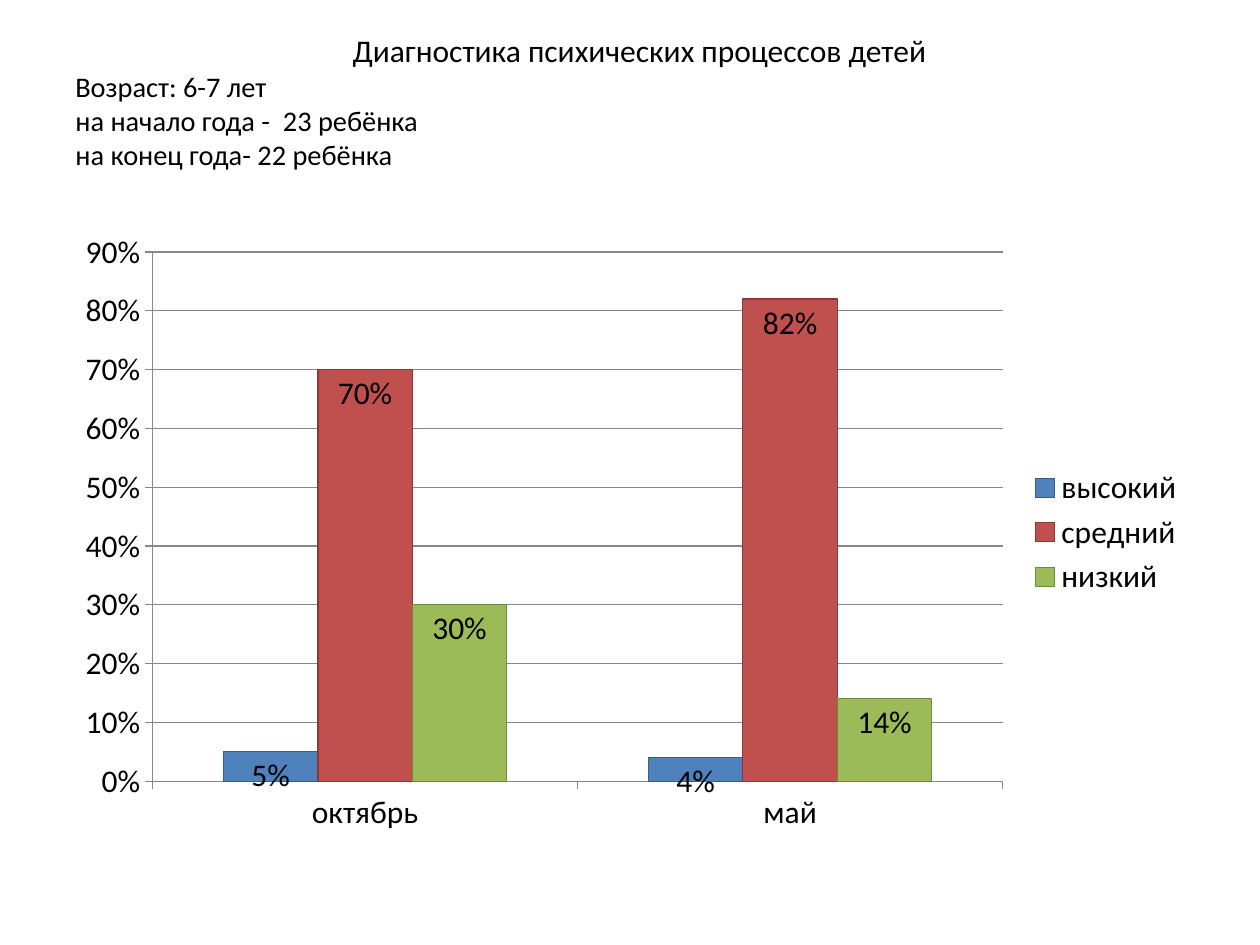
import pptx
import pptx.util
import pptx.chart.data
import pptx.dml.color
import pptx.enum.chart
import pptx.enum.text

Inches, Pt = pptx.util.Inches, pptx.util.Pt
FONT = "Calibri"
GRAY = "878787"
CATEGORIES = ["октябрь", "май"]
# Name, values, fill, outline
LEVELS = [
    ("высокий", (0.05, 0.04), "4F81BD", "385D8A"),
    ("средний", (0.70, 0.82), "C0504D", "8C3836"),
    ("низкий", (0.30, 0.14), "9BBB59", "71893F"),
]


def color(value):
    return pptx.dml.color.RGBColor.from_string(value)


def style_font(font, size):
    font.name = FONT
    font.size = Pt(size)
    font.color.rgb = color("000000")


def style_line(line, value):
    line.color.rgb = color(value)
    line.width = Pt(0.75)


def add_heading(s, lines):
    """Add lines of (text, size, first-line indent in inches)."""
    tf = s.shapes.add_textbox(Inches(0.5), Inches(0.25), Inches(9), Inches(1.5)).text_frame
    tf.word_wrap = True
    tf.margin_top = 0
    tf.vertical_anchor = pptx.enum.text.MSO_ANCHOR.TOP
    for i, (text, size, indent) in enumerate(lines):
        p = tf.paragraphs[0] if i == 0 else tf.add_paragraph()
        p.alignment = pptx.enum.text.PP_ALIGN.LEFT
        p._p.get_or_add_pPr().set("indent", str(Inches(indent)))
        r = p.add_run()
        r.text = text
        style_font(r.font, size)


def style_axes(chart):
    axis = chart.value_axis
    axis.minimum_scale, axis.maximum_scale, axis.major_unit = 0, 0.9, 0.1
    axis.has_major_gridlines = True
    axis.tick_labels.number_format = "0%"
    axis.tick_labels.number_format_is_linked = False
    style_line(axis.major_gridlines.format.line, GRAY)
    for a in (axis, chart.category_axis):
        a.major_tick_mark = pptx.enum.chart.XL_TICK_MARK.OUTSIDE
        style_line(a.format.line, GRAY)


def style_series(series, fill, outline):
    series.format.fill.solid()
    series.format.fill.fore_color.rgb = color(fill)
    style_line(series.format.line, outline)
    labels = series.data_labels
    labels.show_value = True
    labels.position = pptx.enum.chart.XL_LABEL_POSITION.INSIDE_END
    labels.number_format = "0%"
    labels.number_format_is_linked = False
    style_font(labels.font, 18)


def add_level_chart(s):
    data = pptx.chart.data.CategoryChartData(number_format="0%")
    data.categories = CATEGORIES
    for name, values, _, _ in LEVELS:
        data.add_series(name, values)
    chart = s.shapes.add_chart(
        pptx.enum.chart.XL_CHART_TYPE.COLUMN_CLUSTERED,
        Inches(0.5), Inches(1.75), Inches(9), Inches(4.95), data).chart
    style_font(chart.font, 18)
    chart.has_title = False
    chart.has_legend = True
    chart.legend.position = pptx.enum.chart.XL_LEGEND_POSITION.RIGHT
    chart.legend.include_in_layout = False
    style_axes(chart)
    plot = chart.plots[0]
    plot.gap_width = 150
    plot.vary_by_categories = False
    for series, (_, _, fill, outline) in zip(plot.series, LEVELS):
        style_series(series, fill, outline)


def main():
    prs = pptx.Presentation()
    prs.slide_width, prs.slide_height = Inches(10), Inches(7.5)
    s = prs.slides.add_slide(prs.slide_layouts[6])
    # Heading and group details
    add_heading(s, [
        ("Диагностика психических процессов детей", 18, 2.2),
        ("Возраст: 6-7 лет", 16.2, 0),
        ("на начало года -  23 ребёнка", 16.2, 0),
        ("на конец года- 22 ребёнка", 16.2, 0),
    ])
    # Results by month
    add_level_chart(s)
    prs.save("out.pptx")


if __name__ == "__main__":
    main()
